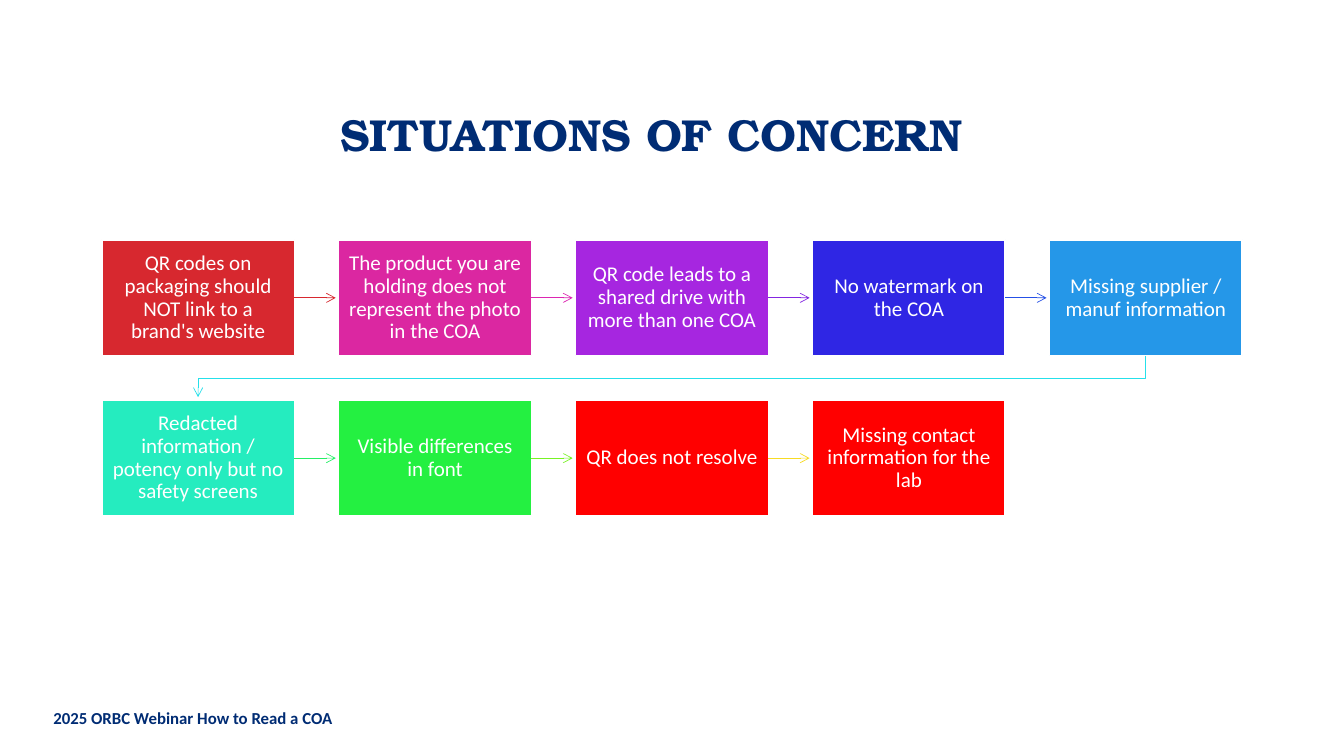
import lxml.etree
import pptx
import pptx.dml.color
import pptx.enum.shapes
import pptx.enum.text
import pptx.oxml.ns
import pptx.util

Inches, Pt = pptx.util.Inches, pptx.util.Pt
SHAPES = pptx.enum.shapes
TEXT = pptx.enum.text

COLOURS = {
    "navy": "002C74", "white": "FFFFFF",
    "red": "D7282F", "magenta": "DB27A1", "purple": "A626E0",
    "indigo": "2F26E4", "sky": "2597E8", "turquoise": "25ECBF",
    "green": "24F041", "alarm": "FF0000",
    "pink": "DC27B2", "violet": "8426E1", "blue": "2550E6",
    "cyan": "25E0EA", "mint": "24EF66", "lime": "78F324", "gold": "F7DB24",
}

# Wording, card colour, colour of the arrow to the next card
SITUATIONS = [
    ("QR codes on packaging should NOT link to a brand's website", "red", "red"),
    ("The product you are holding does not represent the photo in the COA",
     "magenta", "pink"),
    ("QR code leads to a shared drive with more than one COA", "purple", "violet"),
    ("No watermark on the COA", "indigo", "blue"),
    ("Missing supplier / manuf information", "sky", "cyan"),
    ("Redacted information / potency only but no safety screens",
     "turquoise", "mint"),
    ("Visible differences in font", "green", "lime"),
    ("QR does not resolve", "alarm", "gold"),
    ("Missing contact information for the lab", "alarm", None),
]

# Card grid: share of a column or row taken by the card
COLUMNS, ROWS = 5, 2
CARD_WIDTH_SHARE, CARD_HEIGHT_SHARE = 1.91 / 2.35, 1.15 / 1.59
ARROW_GAP = Inches(0.03)


def colour(name):
    return pptx.dml.color.RGBColor.from_string(COLOURS[name])


def format_text(text_frame, font_name, size, colour_name, bold=False):
    for paragraph in text_frame.paragraphs:
        paragraph.alignment = TEXT.PP_ALIGN.CENTER
        for run in paragraph.runs:
            run.font.name = font_name
            run.font.size = Pt(size)
            run.font.bold = bold
            run.font.color.rgb = colour(colour_name)


def format_arrow(shape, colour_name):
    shape.line.color.rgb = colour(colour_name)
    shape.line.width = Pt(0.5)
    line = shape.line._get_or_add_ln()
    lxml.etree.SubElement(line, pptx.oxml.ns.qn("a:tailEnd"), type="arrow")


def add_title(slide, left, top, width, height):
    title = slide.shapes.title
    title.left, title.top, title.width, title.height = left, top, width, height
    text_frame = title.text_frame
    text_frame.text = "SITUATIONS OF CONCERN"
    text_frame.auto_size = TEXT.MSO_AUTO_SIZE.NONE
    text_frame.vertical_anchor = TEXT.MSO_ANCHOR.TOP
    format_text(text_frame, "TeX Gyre Bonum", 32, "navy", bold=True)


def add_footer(slide, left, top, width, height):
    text_frame = slide.shapes.add_textbox(left, top, width, height).text_frame
    text_frame.word_wrap = False
    text_frame.text = "2025 ORBC Webinar How to Read a COA"
    format_text(text_frame, "Calibri", 12, "navy", bold=True)


def add_card(slide, left, top, width, height, text, fill):
    card = slide.shapes.add_shape(
        SHAPES.MSO_SHAPE.RECTANGLE, left, top, width, height)
    card.shadow.inherit = False
    card.fill.solid()
    card.fill.fore_color.rgb = colour(fill)
    card.line.color.rgb = colour("white")
    card.line.width = Pt(1)
    text_frame = card.text_frame
    text_frame.word_wrap = True
    text_frame.vertical_anchor = TEXT.MSO_ANCHOR.MIDDLE
    text_frame.margin_left = text_frame.margin_right = Inches(0.09)
    text_frame.margin_top = text_frame.margin_bottom = Inches(0.1)
    text_frame.text = text
    text_frame.paragraphs[0].line_spacing = 0.9
    format_text(text_frame, "Calibri", 15, "white")
    return card


def add_row_arrow(slide, card, following, colour_name):
    middle = card.top + card.height // 2
    arrow = slide.shapes.add_connector(
        SHAPES.MSO_CONNECTOR.STRAIGHT, card.left + card.width, middle,
        following.left - ARROW_GAP, middle)
    arrow.begin_connect(card, 3)
    lxml.etree.SubElement(
        arrow._element.spPr, pptx.oxml.ns.qn("a:effectLst"))
    format_arrow(arrow, colour_name)


def add_return_arrow(slide, card, following, colour_name):
    start_x = card.left + card.width // 2
    end_x = following.left + following.width // 2
    bottom = card.top + card.height
    turn = (bottom + following.top) // 2
    builder = slide.shapes.build_freeform(start_x, bottom)
    builder.add_line_segments(
        [(start_x, turn), (end_x, turn), (end_x, following.top - ARROW_GAP)],
        close=False)
    arrow = builder.convert_to_shape()
    arrow.shadow.inherit = False
    arrow.fill.background()
    format_arrow(arrow, colour_name)


def add_flow(slide, left, top, width, height):
    # The last column and row end with their card, without a gap
    column = width / (COLUMNS - 1 + CARD_WIDTH_SHARE)
    row = height / (ROWS - 1 + CARD_HEIGHT_SHARE)
    cards = []
    for index, (text, fill, _) in enumerate(SITUATIONS):
        row_index, column_index = divmod(index, COLUMNS)
        cards.append(add_card(
            slide, int(left + column_index * column), int(top + row_index * row),
            int(column * CARD_WIDTH_SHARE), int(row * CARD_HEIGHT_SHARE),
            text, fill))

    # Arrows from each card to the next
    for card, following, situation in zip(cards, cards[1:], SITUATIONS):
        same_row = card.top == following.top
        add_arrow = add_row_arrow if same_row else add_return_arrow
        add_arrow(slide, card, following, situation[2])


def main():
    presentation = pptx.Presentation()
    presentation.slide_width = Inches(13.33)
    presentation.slide_height = Inches(7.5)
    slide = presentation.slides.add_slide(presentation.slide_layouts[5])
    add_title(slide, Inches(0.12), Inches(1.01), Inches(12.69), Inches(3.42))
    add_footer(slide, Inches(0.43), Inches(6.97), Inches(2.97), Inches(0.3))
    add_flow(slide, Inches(1.01), Inches(2.38), Inches(11.31), Inches(2.74))
    presentation.save("out.pptx")


if __name__ == "__main__":
    main()
